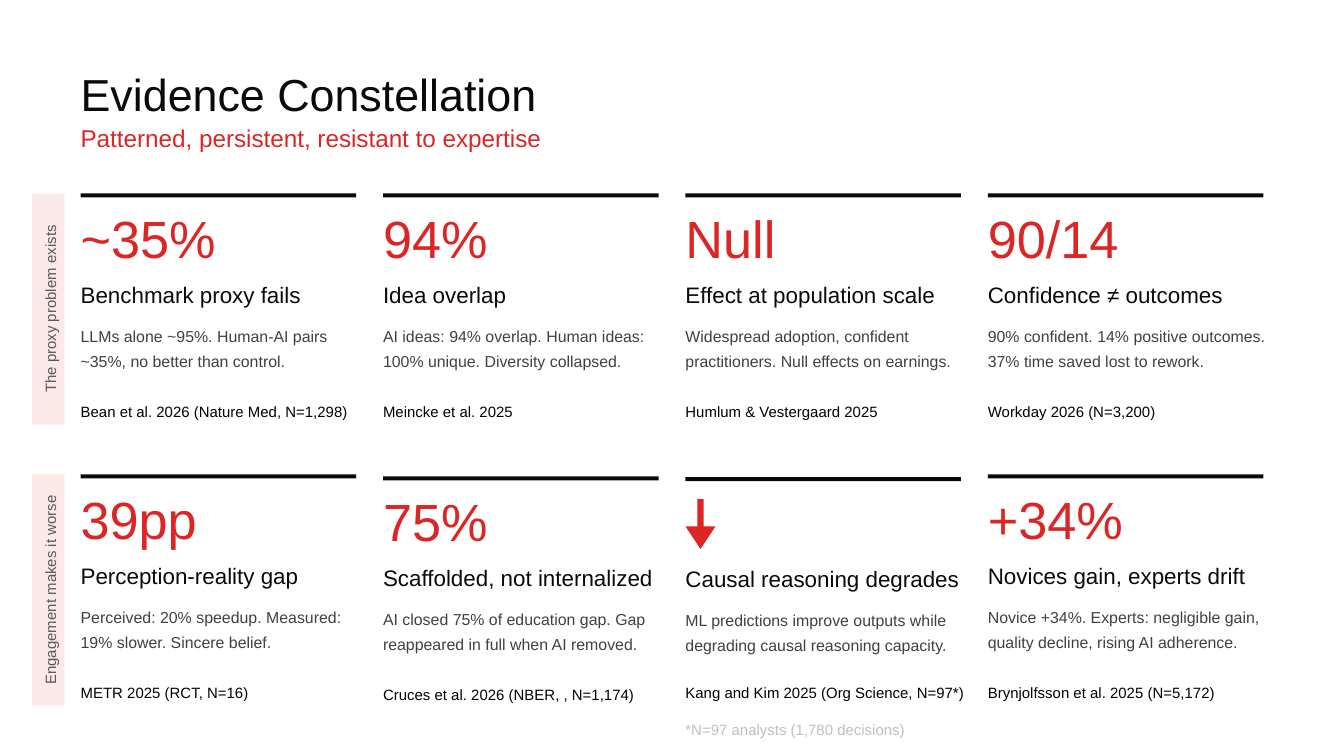
from dataclasses import dataclass

from lxml import etree
from pptx import Presentation
from pptx import util as u
from pptx.dml.color import RGBColor
from pptx.enum import shapes, text
from pptx.oxml.ns import qn

PX = 4572
FONT = "Arial"
INK = RGBColor(0x0A, 0x0A, 0x0A)
BLACK = RGBColor(0x00, 0x00, 0x00)
RED = RGBColor(0xDC, 0x26, 0x26)
ACCENT = RGBColor(0xDC, 0x25, 0x25)
BODY = RGBColor(0x40, 0x40, 0x40)
LABEL = RGBColor(0x59, 0x59, 0x59)
MUTED = RGBColor(0xBF, 0xBF, 0xBF)

LEFT = 120
COLUMN_STEP = 450
CARD_WIDTH = 410
WIDE_WIDTH = 422
ROW_TOPS = (288, 706)
ROW_HEIGHT = 344


@dataclass
class Card:
    figure: str
    heading: str
    body: str
    source: str
    shift: int = 0
    body_width: int = CARD_WIDTH
    source_width: int = CARD_WIDTH
    source_shift: int = 0


ROWS = (
    ("The proxy problem exists", (
        Card("~35%", "Benchmark proxy fails",
             "LLMs alone ~95%. Human-AI pairs ~35%, no better than control.",
             "Bean et al. 2026 (Nature Med, N=1,298)"),
        Card("94%", "Idea overlap",
             "AI ideas: 94% overlap. Human ideas: 100% unique. Diversity collapsed.",
             "Meincke et al. 2025"),
        Card("Null", "Effect at population scale",
             "Widespread adoption, confident practitioners. Null effects on earnings.",
             "Humlum & Vestergaard 2025"),
        Card("90/14", "Confidence ≠ outcomes",
             "90% confident. 14% positive outcomes. 37% time saved lost to rework.",
             "Workday 2026 (N=3,200)", body_width=WIDE_WIDTH),
    )),
    ("Engagement makes it worse", (
        Card("39pp", "Perception-reality gap",
             "Perceived: 20% speedup. Measured: 19% slower. Sincere belief.",
             "METR 2025 (RCT, N=16)"),
        Card("75%", "Scaffolded, not internalized",
             "AI closed 75% of education gap. Gap reappeared in full when AI removed.",
             "Cruces et al. 2026 (NBER, , N=1,174)", shift=3),
        Card("", "Causal reasoning degrades",
             "ML predictions improve outputs while degrading causal reasoning capacity.",
             "Kang and Kim 2025 (Org Science, N=97*)", shift=4,
             source_width=WIDE_WIDTH, source_shift=-4),
        Card("+34%", "Novices gain, experts drift",
             "Novice +34%. Experts: negligible gain, quality decline, rising AI adherence.",
             "Brynjolfsson et al. 2025 (N=5,172)"),
    )),
)


def box(left, top, width, height):
    return [u.Emu(value * PX) for value in (left, top, width, height)]


def write(shape, content, size, color, anchor=text.MSO_ANCHOR.MIDDLE,
          align=text.PP_ALIGN.LEFT, spacing=None):
    frame = shape.text_frame
    frame.word_wrap = True
    frame.vertical_anchor = anchor
    frame.margin_left = frame.margin_top = 0
    frame.margin_right = frame.margin_bottom = 0
    paragraph = frame.paragraphs[0]
    paragraph.alignment = align
    if spacing:
        paragraph.line_spacing = spacing
    run = paragraph.add_run()
    run.text = content
    run.font.name = FONT
    run.font.size = u.Pt(size)
    run.font.color.rgb = color


def add_text(slide, content, left, top, width, height, **formatting):
    shape = slide.shapes.add_textbox(*box(left, top, width, height))
    write(shape, content, **formatting)


def add_block(slide, preset, left, top, width, height, color):
    shape = slide.shapes.add_shape(preset, *box(left, top, width, height))
    shape.shadow.inherit = False
    shape.fill.solid()
    shape.fill.fore_color.rgb = color
    shape.line.fill.background()
    return shape


def add_down_arrow(slide, left, top):
    arrow = add_block(slide, shapes.MSO_SHAPE.DOWN_ARROW, left, top, 45, 74, ACCENT)
    arrow.adjustments[0] = 0.21
    arrow.adjustments[1] = 0.75


def add_row_label(slide, content, row_top):
    thickness = 48
    left = 72 - ROW_HEIGHT // 2
    top = row_top + (ROW_HEIGHT - thickness) // 2
    label = add_block(slide, shapes.MSO_SHAPE.RECTANGLE, left, top,
                      ROW_HEIGHT, thickness, ACCENT)
    label.rotation = 270
    fill_color = label.fill._xPr.find(qn("a:solidFill"))[0]
    etree.SubElement(fill_color, qn("a:alpha")).set("val", "10000")
    write(label, content, size=8, color=LABEL,
          align=text.PP_ALIGN.CENTER, spacing=1.2)


def add_card(slide, card, left, row_top):
    top = row_top + card.shift
    add_block(slide, shapes.MSO_SHAPE.RECTANGLE, left, top, CARD_WIDTH, 6, INK)
    if card.figure:
        add_text(slide, card.figure, left, top + 26, CARD_WIDTH, 80,
                 size=28, color=RED)
    else:
        add_down_arrow(slide, left, top + 33)
    add_text(slide, card.heading, left, top + 126, CARD_WIDTH, 50,
             size=12, color=INK)
    add_text(slide, card.body, left, top + 190, card.body_width, 90,
             size=8.5, color=BODY, anchor=text.MSO_ANCHOR.TOP, spacing=1.3)
    add_text(slide, card.source, left, top + 305 + card.source_shift,
             card.source_width, 40, size=8, color=BLACK)


def main():
    presentation = Presentation()
    presentation.slide_width = u.Emu(2000 * PX)
    presentation.slide_height = u.Emu(1125 * PX)
    slide = presentation.slides.add_slide(presentation.slide_layouts[6])

    add_text(slide, "Evidence Constellation", LEFT, 100, 790, 80,
             size=24, color=INK)
    add_text(slide, "Patterned, persistent, resistant to expertise",
             LEFT, 180, 790, 50, size=13, color=RED)
    for row_top, (label, cards) in zip(ROW_TOPS, ROWS):
        add_row_label(slide, label, row_top)
        for column, card in enumerate(cards):
            add_card(slide, card, LEFT + column * COLUMN_STEP, row_top)
    add_text(slide, "*N=97 analysts (1,780 decisions)",
             LEFT + 2 * COLUMN_STEP, 1066, WIDE_WIDTH, 40, size=8, color=MUTED)

    presentation.save("out.pptx")


if __name__ == "__main__":
    main()
